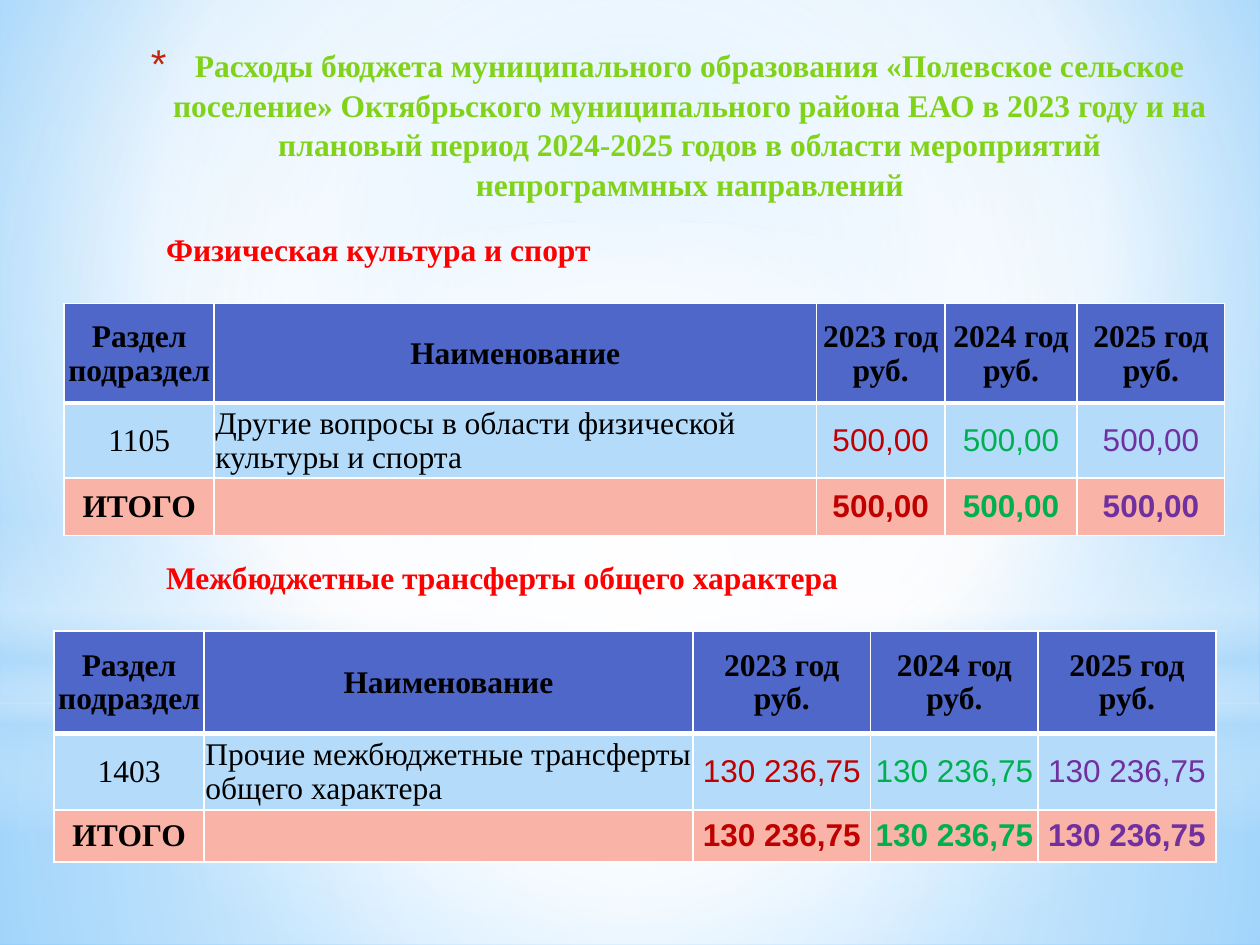
from lxml import etree
from pptx import Presentation, util as u
from pptx.dml.color import RGBColor
from pptx.enum import shapes, text
from pptx.oxml import parse_xml
from pptx.oxml.ns import nsdecls, qn

COLS, ROWS = 100, 75
W, H = u.Inches(10), u.Inches(7.5)
C = {
    "white": "FFFFFF", "sky": "9ED5FF", "azure": "5BB9FF", "pale": "B4DCFA",
    "title": "81D31A", "bullet": "C3260C", "section": "FF0000", "text": "000000",
    "head": "4E67C8", "total": "F9B3A7",
    "2023": "C00000", "2024": "00B050", "2025": "7030A0",
}
SERIF, SANS = "Times New Roman", "Arial"
CENTER, LEFT = text.PP_ALIGN.CENTER, text.PP_ALIGN.LEFT


def x(cols):
    """Turn grid columns into a length."""
    return int(W * cols / COLS)


def y(rows):
    """Turn grid rows into a length."""
    return int(H * rows / ROWS)


def place(box):
    """Turn a box in columns and rows into left, top, width, height."""
    left, top, width, height = box
    return x(left), y(top), x(width), y(height)


def apply(obj, **values):
    """Set each given attribute on an object."""
    for name, value in values.items():
        setattr(obj, name, value)


def gradient(stops, centre=None):
    """Build a gradient fill: circular around a rectangle, or top to bottom."""
    gs = "".join(
        f'<a:gs pos="{pos * 1000}"><a:srgbClr val="{C[name]}">'
        f'<a:alpha val="{alpha * 1000}"/></a:srgbClr></a:gs>'
        for pos, name, alpha in stops)
    shade = '<a:lin ang="5400000" scaled="0"/>'
    if centre:
        sides = " ".join(f'{k}="{v * 1000}"' for k, v in zip("ltrb", centre))
        shade = f'<a:path path="circle"><a:fillToRect {sides}/></a:path>'
    return parse_xml(f'<a:gradFill {nsdecls("a")} rotWithShape="1">'
                     f'<a:gsLst>{gs}</a:gsLst>{shade}</a:gradFill>')


def swap_fill(fill, parent, grad):
    """Put a gradient where the solid fill of a parent element stands."""
    fill.solid()
    parent.replace(parent.find(qn("a:solidFill")), grad)


def write(tf, words, align, spacing=1, font=SERIF, color="text", bold=True):
    """Write one formatted paragraph and return it."""
    p = tf.paragraphs[0]
    apply(p, alignment=align, line_spacing=spacing)
    if words:
        r = p.add_run()
        r.text = words
        apply(r.font, size=u.Pt(18), name=font, bold=bold)
        r.font.color.rgb = RGBColor.from_string(C[color])
    return p


def backdrop(s):
    """Fill the background and lay the soft glows over it."""
    bg = s.background
    bg.fill.solid()
    swap_fill(bg.fill, s._element.find(".//" + qn("p:bgPr")),
              gradient([(0, "sky", 100), (60, "white", 100), (100, "azure", 100)],
                       (20, 10, 20, 60)))
    mid, horizon = (50, 50, 50, 50), 55.8
    rect, oval = shapes.MSO_SHAPE.RECTANGLE, shapes.MSO_SHAPE.OVAL
    glows = [
        (rect, (0, horizon, COLS, ROWS - horizon), mid,
         [(0, "white", 91), (37, "white", 76), (100, "pale", 79)]),
        (rect, (0, 0, COLS, horizon), mid,
         [(0, "white", 89), (48, "white", 62), (100, "pale", 79)]),
        (rect, (0, 41.2, COLS, 25), None,
         [(0, "white", 0), (29, "white", 30), (45, "pale", 40),
          (55, "white", 26), (65, "pale", 60), (100, "white", 0)]),
        (oval, (0, 17.5, COLS, horizon), mid, [(0, "white", 100), (56, "white", 0)]),
    ]
    for kind, box, centre, stops in glows:
        sp = s.shapes.add_shape(kind, *place(box))
        sp.shadow.inherit = False
        sp.line.fill.background()
        swap_fill(sp.fill, sp._element.spPr, gradient(stops, centre))


def title(s, box, words):
    """Place the centred title with its star bullet."""
    tf = s.shapes.add_textbox(*place(box)).text_frame
    tf.word_wrap = True
    pPr = write(tf, words, CENTER, 1.05, color="title")._p.get_or_add_pPr()
    pPr.set("marL", str(x(3.5)))
    pPr.set("indent", str(-x(3.5)))
    color = etree.SubElement(pPr, qn("a:buClr"))
    etree.SubElement(color, qn("a:srgbClr"), val=C["bullet"])
    etree.SubElement(pPr, qn("a:buSzPct"), val="128000")
    etree.SubElement(pPr, qn("a:buFont"), typeface=SANS)
    etree.SubElement(pPr, qn("a:buChar"), char="*")


def section(s, box, words):
    """Place the heading above a table."""
    tf = s.shapes.add_textbox(*place(box)).text_frame
    apply(tf, word_wrap=True, auto_size=text.MSO_AUTO_SIZE.SHAPE_TO_FIT_TEXT)
    write(tf, words, LEFT, color="section")


def style_cell(cell, fill, top, bottom):
    """Give a cell its margins, white borders and fill."""
    m = x(0.1)
    apply(cell, margin_left=m, margin_right=m, margin_top=m, margin_bottom=0,
          vertical_anchor=text.MSO_ANCHOR.MIDDLE)
    tcPr = cell._tc.get_or_add_tcPr()
    for side, width in zip("LRTB", (1, 1, top, bottom)):
        ln = etree.SubElement(tcPr, qn(f"a:ln{side}"), w=str(u.Pt(width)))
        etree.SubElement(etree.SubElement(ln, qn("a:solidFill")),
                         qn("a:srgbClr"), val=C["white"])
    cell.fill.solid()
    cell.fill.fore_color.rgb = RGBColor.from_string(C[fill])


def budget_table(s, left, top, widths, heights, code, name, amount):
    """Place a budget table: header, one expense and the total."""
    years = ["2023", "2024", "2025"]
    amounts = [amount] * len(years)
    rows = [
        ("head", 1, 3, ["Раздел подраздел", "Наименование"]
         + [f"{year} год руб." for year in years]),
        ("pale", 3, 1, [code, name] + amounts),
        ("total", 1, 1, ["ИТОГО", ""] + amounts),
    ]
    box = left, top, sum(widths), sum(heights)
    tbl = s.shapes.add_table(len(rows), len(widths), *place(box)).table
    tbl.horz_banding = False
    for col, width in zip(tbl.columns, widths):
        col.width = x(width)
    for i, (fill, over, under, words) in enumerate(rows):
        tbl.rows[i].height = y(heights[i])
        for j, value in enumerate(words):
            cell = tbl.cell(i, j)
            style_cell(cell, fill, over, under)
            money = i > 0 and j > 1
            write(cell.text_frame, value, LEFT if (i, j) == (1, 1) else CENTER, 0.97,
                  font=SANS if money else SERIF,
                  color=years[j - 2] if money else "text", bold=fill != "pale")


def main():
    """Build the slide and save it."""
    prs = Presentation()
    apply(prs, slide_width=W, slide_height=H)
    s = prs.slides.add_slide(prs.slide_layouts[6])
    backdrop(s)
    title(s, (8.3, 3, 89.4, 13.2),
          "Расходы бюджета муниципального образования «Полевское сельское поселение» "
          "Октябрьского муниципального района ЕАО в 2023 году и на плановый период "
          "2024-2025 годов в области мероприятий непрограммных направлений")
    budget_table(s, 5.1, 24.1, (11.9, 47.8, 10.2, 10.5, 11.7), (7.9, 5.6, 4.6),
                 "1105", "Другие вопросы в области физической культуры и спорта",
                 "500,00")
    section(s, (12.2, 17.8, 52.8, 4), "Физическая культура и спорт")
    section(s, (12.2, 43.8, 84.2, 4), "Межбюджетные трансферты общего характера")
    budget_table(s, 4.3, 50.1, (11.9, 38.8, 14.1, 13.3, 14.1), (8.1, 6.1, 4.1),
                 "1403", "Прочие межбюджетные трансферты общего характера",
                 "130 236,75")
    prs.save("out.pptx")


if __name__ == "__main__":
    main()
